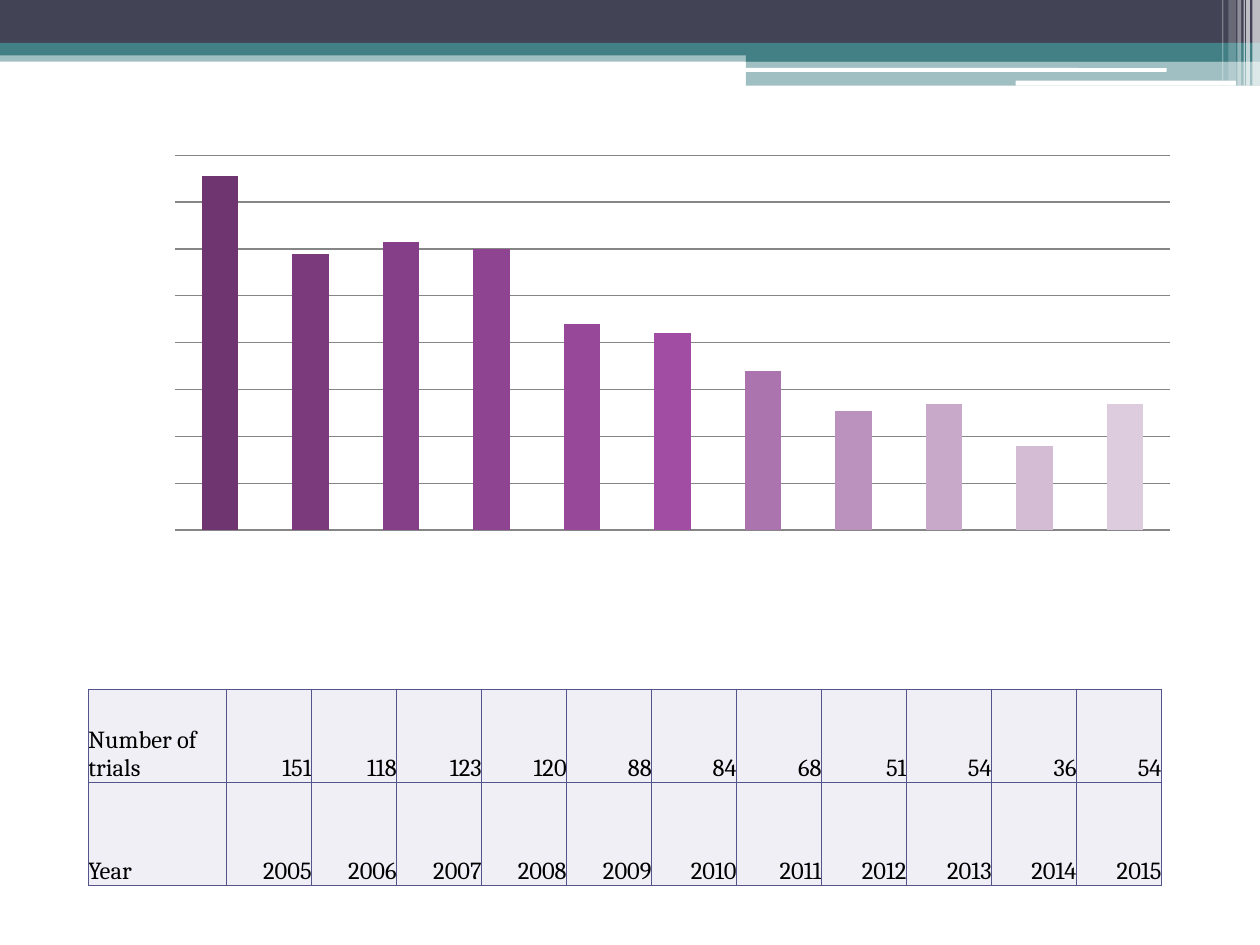
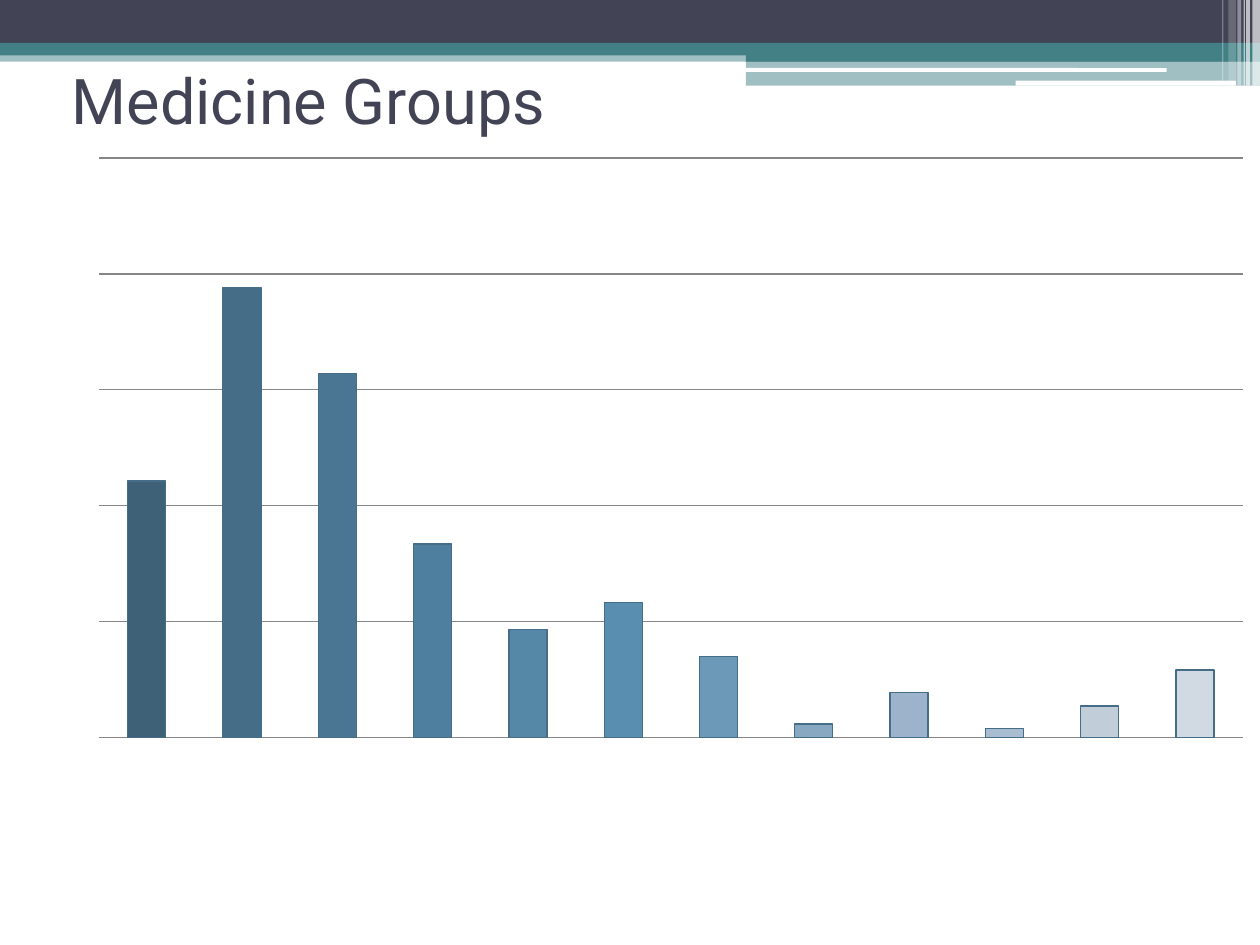
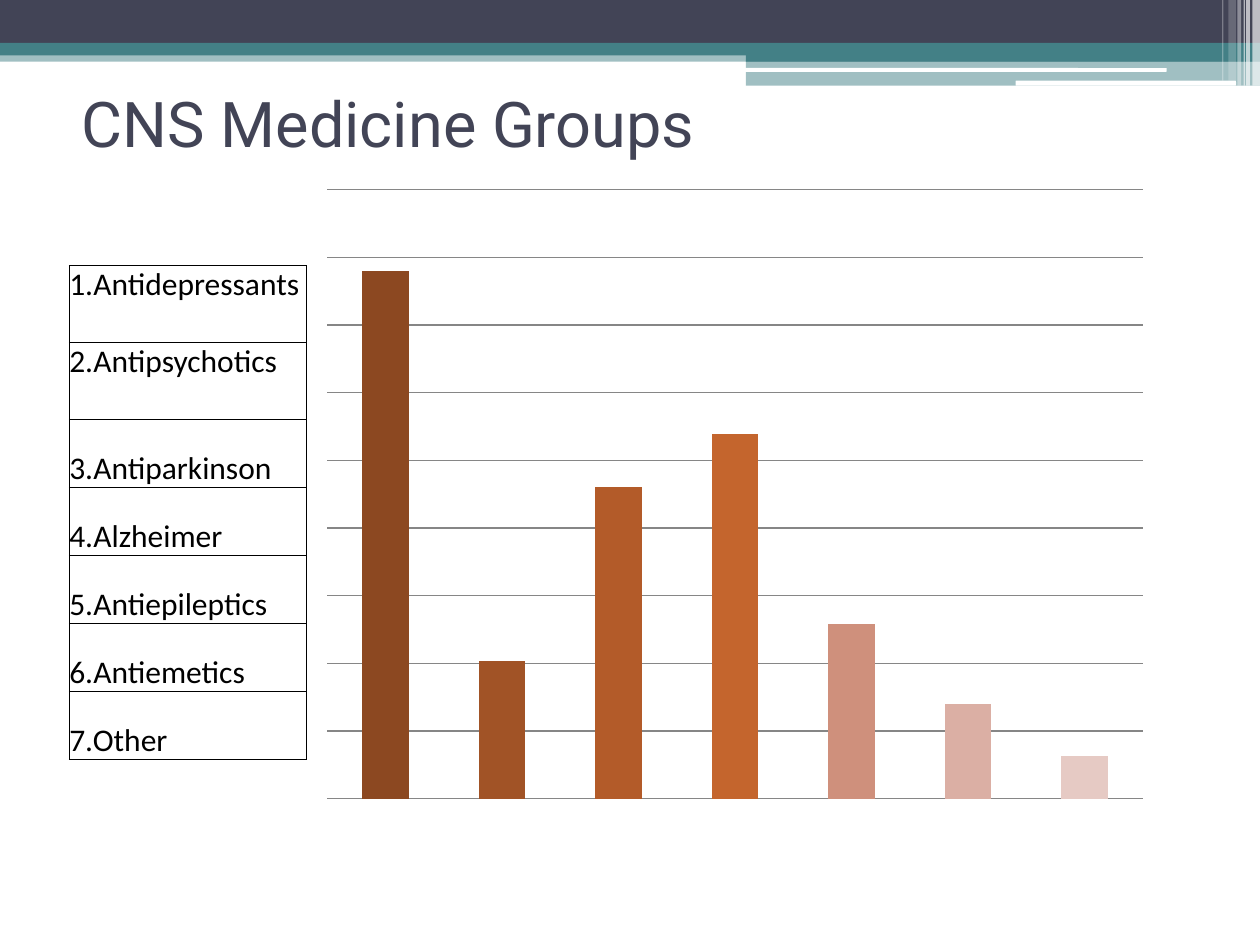
import pptx
import pptx.chart.data
import pptx.dml.color
import pptx.enum.chart
import pptx.enum.shapes
import pptx.enum.text
import pptx.oxml
import pptx.oxml.ns
import pptx.util
from pptx.util import Inches

NAVY, TEAL, WHITE, BLACK = "424456", "438086", "FFFFFF", "000000"
GRID_GREY, TABLE_BLUE, TABLE_TINT = "868686", "53548A", "F0EFF6"
BAR_EDGE = "456D87"
TITLE_FONT, CHART_FONT, LIST_FONT = "Roboto", "Cambria", "Calibri"

PURPLES = ["6F3571", "7A3A7C", "853F88", "8F4492", "974899", "A04DA3",
           "AC74AF", "BB92BD", "C8A9C9", "D3BCD4", "DDCCDE"]
BLUES = ["3E6178", "456D87", "4A7593", "4F7F9E", "5587A7", "5A8EB1",
         "6C99B8", "88A8C2", "9DB3CB", "A9BDD1", "C1CEDA", "D1DAE3"]
ORANGES = ["8C4821", "A15326", "B35B29", "C4652D", "CF907C", "DBAFA4", "E6CAC4"]

TRIALS = [151, 118, 123, 120, 88, 84, 68, 51, 54, 36, 54]
YEARS = range(2005, 2016)
MEDICINE_GROUPS = [57, 100, 81, 43, 24, 30, 18, 3, 10, 2, 7, 15]
CNS_GROUPS = {"Antidepressants": 100, "Antipsychotics": 26, "Antiparkinson": 59,
              "Alzheimer": 69, "Antiepileptics": 33, "Antiemetics": 18, "Other": 8}

RECT = pptx.enum.shapes.MSO_SHAPE.RECTANGLE
ROUNDED = pptx.enum.shapes.MSO_SHAPE.ROUNDED_RECTANGLE
ANCHOR = pptx.enum.text.MSO_ANCHOR
ALIGN = pptx.enum.text.PP_ALIGN

# preset, left, top, width, height, colour, opacity in percent
BANDS = [
    (RECT, 0, 0.4, 10, 0.09, TEAL, 50),
    (RECT, 0, 0, 10, 0.34, NAVY, 100),
    (RECT, 0, 0.34, 10, 0.1, TEAL, 100),
    (RECT, 5.92, 0.39, 4.08, 0.1, TEAL, 100),
    (RECT, 5.92, 0.48, 4.08, 0.2, TEAL, 50),
    (ROUNDED, 5.91, 0.54, 3.35, 0.03, WHITE, 100),
    (ROUNDED, 8.06, 0.64, 1.75, 0.04, WHITE, 100),
    (RECT, 9.94, 0, 0.06, 0.68, WHITE, 65),
    (RECT, 9.89, 0, 0.03, 0.68, WHITE, 65),
    (RECT, 9.87, 0, 0.01, 0.68, WHITE, 60),
    (RECT, 9.82, 0, 0.03, 0.68, WHITE, 40),
    (RECT, 9.75, 0, 0.06, 0.64, WHITE, 20),
    (RECT, 9.7, 0, 0.01, 0.64, WHITE, 30),
]


def rgb(value):
    return pptx.dml.color.RGBColor.from_string(value)


def paint(fill, colour):
    fill.solid()
    fill.fore_color.rgb = rgb(colour)


def style_font(font, name, size, colour):
    font.name = name
    font.size = pptx.util.Pt(size)
    font.color.rgb = rgb(colour)


def add_band(slide, preset, left, top, width, height, colour, opacity):
    band = slide.shapes.add_shape(preset, Inches(left), Inches(top),
                                  Inches(width), Inches(height))
    band.shadow.inherit = False
    band.line.fill.background()
    paint(band.fill, colour)
    if opacity < 100:
        tone = band.fill._xPr.find(".//" + pptx.oxml.ns.qn("a:srgbClr"))
        tone.append(pptx.oxml.parse_xml(
            f'<a:alpha {pptx.oxml.ns.nsdecls("a")} val="{opacity * 1000}"/>'))
    return band


def add_master_bands(prs, slide):
    """Build the header bands on a slide, then move them to the slide master."""
    master_tree = prs.slide_master.element.cSld.spTree
    for number, band_spec in enumerate(BANDS, start=100):
        band = add_band(slide, *band_spec).element
        band.nvSpPr.cNvPr.set("id", str(number))
        master_tree.append(band)


def add_title(slide, text, left, top, width, height):
    title = slide.shapes.title
    title.left, title.top = Inches(left), Inches(top)
    title.width, title.height = Inches(width), Inches(height)
    frame = title.text_frame
    frame.text = text
    frame.auto_size = pptx.enum.text.MSO_AUTO_SIZE.NONE
    frame.vertical_anchor = ANCHOR.MIDDLE
    frame.paragraphs[0].alignment = ALIGN.LEFT
    style_font(frame.paragraphs[0].runs[0].font, TITLE_FONT, 36, NAVY)


def set_plot_layout(chart, x, y, width, height):
    plot_area = chart.element.chart.plotArea
    for old_layout in plot_area.findall(pptx.oxml.ns.qn("c:layout")):
        plot_area.remove(old_layout)
    plot_area.insert(0, pptx.oxml.parse_xml(
        f'<c:layout {pptx.oxml.ns.nsdecls("c")}><c:manualLayout>'
        '<c:layoutTarget val="inner"/><c:xMode val="edge"/><c:yMode val="edge"/>'
        f'<c:x val="{x}"/><c:y val="{y}"/><c:w val="{width}"/><c:h val="{height}"/>'
        '</c:manualLayout></c:layout>'))


def add_bar_chart(slide, box, plot_box, values, colours, grid_step, grid_count,
                  edge=None):
    data = pptx.chart.data.CategoryChartData()
    data.categories = [str(number) for number in range(1, len(values) + 1)]
    data.add_series("Series 1", values)
    chart = slide.shapes.add_chart(
        pptx.enum.chart.XL_CHART_TYPE.COLUMN_CLUSTERED,
        *(Inches(length) for length in box), data).chart
    chart.has_legend = chart.has_title = False
    style_font(chart.font, CHART_FONT, 18, BLACK)
    set_plot_layout(chart, *plot_box)

    chart.category_axis.visible = False
    scale = chart.value_axis
    scale.visible = False
    scale.minimum_scale, scale.maximum_scale = 0, grid_step * grid_count
    scale.major_unit = grid_step
    scale.has_major_gridlines = True
    grid_line = scale.major_gridlines.format.line
    grid_line.color.rgb = rgb(GRID_GREY)
    grid_line.width = pptx.util.Pt(0.75)

    bars = chart.plots[0]
    bars.gap_width = 150
    bars.vary_by_categories = False
    for index, colour in enumerate(colours):
        bar = bars.series[0].points[index].format
        paint(bar.fill, colour)
        if edge:
            bar.line.color.rgb = rgb(edge)
            bar.line.width = pptx.util.Pt(0.75)
        else:
            bar.line.fill.background()


def add_borders(cell, colour, points):
    properties = cell._tc.get_or_add_tcPr()
    for side in ("lnL", "lnR", "lnT", "lnB"):
        properties.append(pptx.oxml.parse_xml(
            f'<a:{side} {pptx.oxml.ns.nsdecls("a")} w="{pptx.util.Pt(points)}">'
            f'<a:solidFill><a:srgbClr val="{colour}"/></a:solidFill></a:{side}>'))


def add_grid_table(slide, left, top, widths, heights, rows, font, size,
                   border, fill=None):
    """Add a bordered table; cells after the first column align right."""
    table = slide.shapes.add_table(
        len(heights), len(widths), Inches(left), Inches(top),
        Inches(sum(widths)), Inches(sum(heights))).table
    table.first_row = table.horz_banding = False
    for column, width in zip(table.columns, widths):
        column.width = Inches(width)
    for row, height, texts in zip(table.rows, heights, rows):
        row.height = Inches(height)
        for index, (cell, text) in enumerate(zip(row.cells, texts)):
            cell.margin_left = cell.margin_right = 0
            cell.margin_top = cell.margin_bottom = 0
            cell.vertical_anchor = ANCHOR.BOTTOM
            cell.text_frame.text = str(text)
            paragraph = cell.text_frame.paragraphs[0]
            paragraph.alignment = ALIGN.RIGHT if index else ALIGN.LEFT
            style_font(paragraph.runs[0].font, font, size, BLACK)
            add_borders(cell, *border)
            if fill:
                paint(cell.fill, fill)
            else:
                cell.fill.background()
    return table


def build_trials_slide(slide):
    year_width = (8.52 - 1.1) / len(TRIALS)
    add_grid_table(slide, 0.7, 5.47, [1.1] + [year_width] * len(TRIALS), [0.74, 0.82],
                   [["Number of trials", *TRIALS], ["Year", *YEARS]],
                   CHART_FONT, 14, (TABLE_BLUE, 0.75), TABLE_TINT)
    add_bar_chart(slide, (0.62, 1.09, 8.91, 3.84), (0.086, 0.037, 0.887, 0.775),
                  TRIALS, PURPLES, grid_step=20, grid_count=8)


def build_medicine_slide(slide):
    add_title(slide, "Medicine Groups", 0.47, 0.55, 9, 0.47)
    add_bar_chart(slide, (0.23, 1.17, 9.77, 6.02), (0.057, 0.014, 0.929, 0.764),
                  MEDICINE_GROUPS, BLUES, grid_step=25.77, grid_count=5, edge=BAR_EDGE)


def build_cns_slide(slide):
    add_title(slide, "CNS Medicine Groups", 0.55, 0.62, 9, 0.7)
    add_bar_chart(slide, (2.42, 1.33, 7.42, 5.47), (0.024, 0.032, 0.872, 0.884),
                  list(CNS_GROUPS.values()), ORANGES, grid_step=12.82, grid_count=9)
    names = [[f"{number}.{name}"] for number, name in enumerate(CNS_GROUPS, start=1)]
    key = add_grid_table(slide, 0.55, 2.11, [1.88], [0.61] * 2 + [0.54] * 5, names,
                         LIST_FONT, 18, (BLACK, 0.5))
    for row in range(2):
        key.cell(row, 0).vertical_anchor = ANCHOR.TOP


def main():
    prs = pptx.Presentation()
    prs.slide_width, prs.slide_height = Inches(10), Inches(7.5)
    title_only, blank = prs.slide_layouts[5], prs.slide_layouts[6]
    trials = prs.slides.add_slide(blank)
    add_master_bands(prs, trials)
    build_trials_slide(trials)
    build_medicine_slide(prs.slides.add_slide(title_only))
    build_cns_slide(prs.slides.add_slide(title_only))
    prs.save("out.pptx")


if __name__ == "__main__":
    main()
